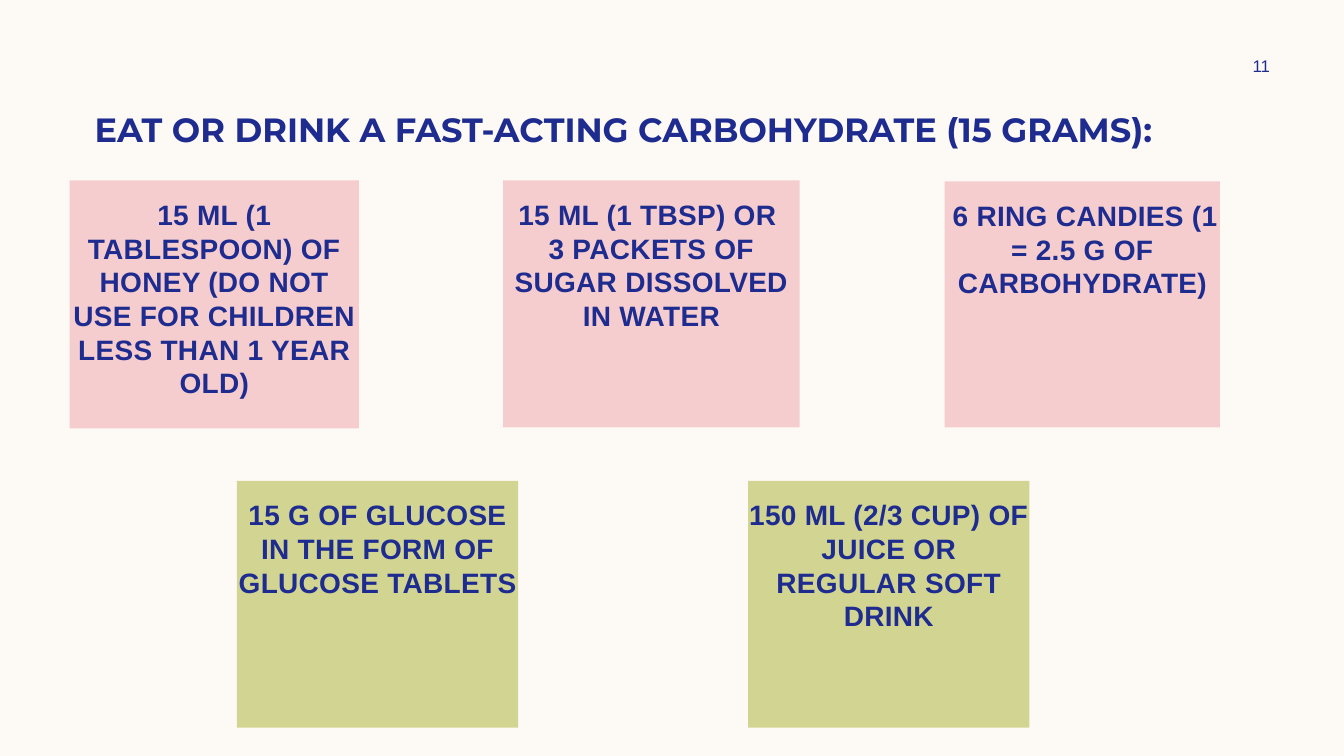
from pptx import Presentation
from pptx.dml.color import RGBColor
from pptx.enum import shapes, text
from pptx.util import Inches, Pt

CREAM = RGBColor(0xFD, 0xFA, 0xF6)
NAVY = RGBColor(0x1F, 0x2C, 0x8F)
PINK = RGBColor(0xF5, 0xCD, 0xCE)
GREEN = RGBColor(0xD2, 0xD5, 0x92)

CARDS = [
    ((0.69, 1.79, 2.87, 2.46), PINK,
     [[("15 ML (1 TABLESPOON) OF HONEY (DO NOT USE FOR CHILDREN LESS THAN 1 YEAR OLD)", 20)]]),
    ((4.99, 1.79, 2.94, 2.45), PINK,
     [[("15 ML (1 TBSP) OR ", 20)],
      [("3 PACKETS OF SUGAR DISSOLVED IN WATER", 20)]]),
    ((9.37, 1.8, 2.73, 2.44), PINK,
     [[(" ", 14), ("6 RING CANDIES (1 = 2.5 G OF CARBOHYDRATE)", 20)]]),
    ((2.35, 4.77, 2.79, 2.45), GREEN,
     [[("15 G OF GLUCOSE IN THE FORM OF GLUCOSE TABLETS", 20)]]),
    ((7.42, 4.77, 2.79, 2.45), GREEN,
     [[("150 ML (2/3 CUP) OF JUICE OR REGULAR SOFT DRINK", 20)]]),
]


def add_run(para, words, size, face="Arial", bold=True):
    run = para.add_run()
    run.text = words
    font = run.font
    font.name = face
    font.size = Pt(size)
    font.bold = bold
    font.color.rgb = NAVY
    return run


def add_label(slide, box, words, size, face, bold, align, anchor):
    frame = slide.shapes.add_textbox(*map(Inches, box)).text_frame
    frame.word_wrap = True
    frame.vertical_anchor = anchor
    para = frame.paragraphs[0]
    para.alignment = align
    add_run(para, words, size, face, bold)


def add_card(slide, box, fill, lines):
    card = slide.shapes.add_shape(shapes.MSO_SHAPE.RECTANGLE, *map(Inches, box))
    card.shadow.inherit = False
    card.fill.solid()
    card.fill.fore_color.rgb = fill
    card.line.fill.background()
    frame = card.text_frame
    frame.word_wrap = True
    frame.vertical_anchor = text.MSO_ANCHOR.TOP
    frame.margin_left = frame.margin_right = 0
    frame.margin_top = Inches(0.17)
    frame.margin_bottom = Inches(0.05)
    for i, line in enumerate(lines):
        para = frame.add_paragraph() if i else frame.paragraphs[0]
        para.alignment = text.PP_ALIGN.CENTER
        for words, size in line:
            run = add_run(para, words, size)
            run.font._element.set("spc", "20")


def main():
    deck = Presentation()
    deck.slide_width = Inches(13.33)
    deck.slide_height = Inches(7.5)
    slide = deck.slides.add_slide(deck.slide_layouts[6])
    slide.background.fill.solid()
    slide.background.fill.fore_color.rgb = CREAM
    add_label(slide, (0.84, 1.03, 11.67, 0.54),
              "EAT OR DRINK A FAST-ACTING CARBOHYDRATE (15 GRAMS):",
              24, "Montserrat", True, text.PP_ALIGN.LEFT, text.MSO_ANCHOR.TOP)
    add_label(slide, (11.97, 0.5, 1.08, 0.3), "11", 12, "Arial", False,
              text.PP_ALIGN.CENTER, text.MSO_ANCHOR.MIDDLE)
    for box, fill, lines in CARDS:
        add_card(slide, box, fill, lines)
    deck.save("out.pptx")


if __name__ == "__main__":
    main()
